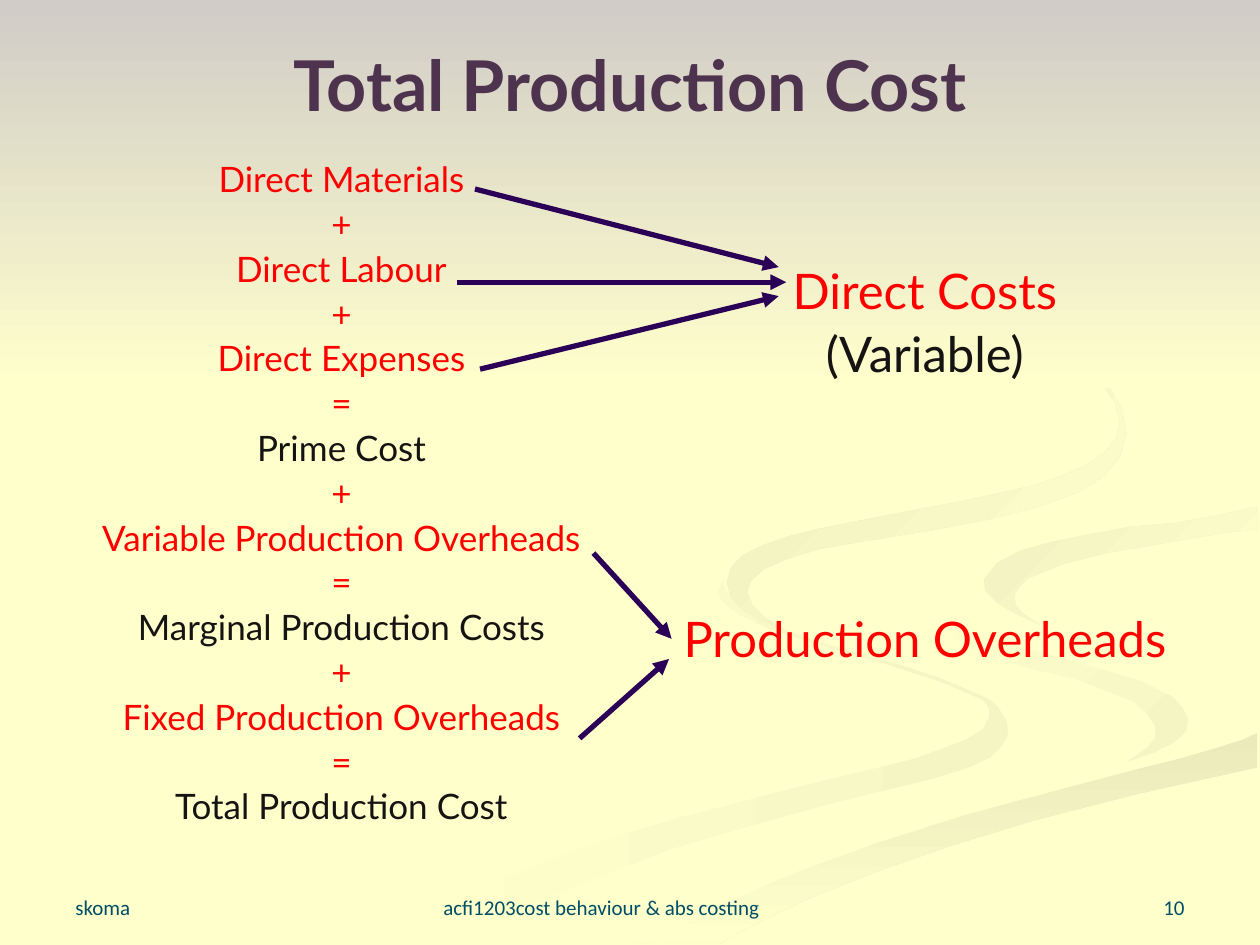
from pptx import Presentation
from pptx.dml.color import RGBColor
from pptx.enum.shapes import MSO_CONNECTOR
from pptx.enum.text import MSO_ANCHOR, PP_ALIGN
from pptx.oxml.ns import qn
from pptx.util import Inches, Pt
from lxml import etree

LEFT, CENTER, RIGHT = PP_ALIGN.LEFT, PP_ALIGN.CENTER, PP_ALIGN.RIGHT
TOP, MIDDLE, BOTTOM = MSO_ANCHOR.TOP, MSO_ANCHOR.MIDDLE, MSO_ANCHOR.BOTTOM
STRAIGHT = MSO_CONNECTOR.STRAIGHT

CREAM, RED, INK = "FFFFCC", "FF0000", "161412"
PLUM, VIOLET, TEAL = "4E334F", "2B0057", "004D66"
HEADING_FONT, FOOTER_FONT = "Lato", "Calibri"

BAND = [(0, 0), (0, 3.08), (10, 3.08), (10, 0)]
LOWER_LEFT_RIBBON = [
    (7.81, 5.53), (7.67, 5.47), (7.45, 5.38), (7.15, 5.28), (6.82, 5.19), (6.42, 5.07),
    (6.14, 4.96), (5.94, 4.85), (5.83, 4.77), (5.76, 4.69), (5.74, 4.64), (5.75, 4.59),
    (5.7, 4.68), (5.72, 4.76), (5.81, 4.84), (5.93, 4.91), (6.11, 4.99), (6.54, 5.13),
    (6.97, 5.25), (7.28, 5.35), (7.52, 5.43), (7.7, 5.51), (7.81, 5.56), (7.85, 5.62),
    (7.85, 5.7), (7.8, 5.79), (7.67, 5.87), (7.49, 5.94), (7.27, 6.02), (6.99, 6.09),
    (6.52, 6.2), (6.16, 6.29), (5.79, 6.39), (5.39, 6.49), (4.99, 6.61), (4.58, 6.74),
    (4.17, 6.9), (3.76, 7.07), (3.38, 7.27), (3, 7.49), (3.61, 7.49), (3.96, 7.31),
    (4.31, 7.14), (4.66, 7), (4.99, 6.87), (5.32, 6.74), (5.94, 6.56), (6.51, 6.4),
    (6.99, 6.28), (7.4, 6.18), (7.69, 6.09), (7.86, 6.01), (7.95, 5.92), (7.99, 5.85),
    (8, 5.81), (7.99, 5.73), (7.92, 5.61), (7.86, 5.56)]
LOWER_RIGHT_RIBBON = [
    (9.43, 5.7), (9.39, 5.62), (9.3, 5.53), (9.05, 5.4), (8.7, 5.3), (8.3, 5.19),
    (7.92, 5.09), (7.58, 4.98), (7.33, 4.83), (7.27, 4.74), (7.24, 4.64), (7.25, 4.74),
    (7.3, 4.84), (7.39, 4.94), (7.55, 5.05), (7.81, 5.18), (8.15, 5.3), (8.54, 5.39),
    (8.8, 5.49), (9, 5.57), (9.11, 5.67), (9.17, 5.76), (9.17, 5.85), (9.11, 5.93),
    (9, 6.01), (8.94, 6.05), (9.16, 5.97), (9.32, 5.89), (9.41, 5.81), (9.43, 5.76)]
SHADED_TAIL = [
    (5.19, 7.47), (5.03, 7.49), (5.71, 7.49), (5.87, 7.4), (6.14, 7.26), (6.49, 7.1),
    (6.95, 6.92), (7.52, 6.72), (8.21, 6.51), (9.03, 6.3), (9.98, 6.09), (9.98, 5.81),
    (9.85, 5.87), (9.63, 5.94), (9.36, 6.02), (9.03, 6.1), (8.31, 6.29), (7.64, 6.47),
    (6.96, 6.69), (6.3, 6.93), (5.69, 7.19), (5.43, 7.33)]
PLAIN_RIBBON = [
    (7.25, 4.64), (7.28, 4.74), (7.34, 4.83), (7.59, 4.98), (7.93, 5.09), (8.31, 5.19),
    (8.71, 5.3), (9.05, 5.4), (9.31, 5.53), (9.39, 5.62), (9.43, 5.7), (9.42, 5.79),
    (9.36, 5.87), (9.26, 5.93), (9.11, 6), (8.92, 6.05), (8.69, 6.11), (8.12, 6.25),
    (7.43, 6.43), (6.63, 6.68), (5.73, 7.03), (5.26, 7.24), (4.77, 7.49), (5.03, 7.49),
    (5.19, 7.47), (5.7, 7.19), (6.3, 6.93), (6.96, 6.69), (7.65, 6.47), (8.32, 6.29),
    (9.04, 6.1), (9.36, 6.02), (9.64, 5.94), (9.86, 5.87), (9.99, 5.81), (9.99, 5.38),
    (9.74, 5.34), (9.41, 5.27), (9.04, 5.19), (8.66, 5.09), (8.32, 4.98), (8.04, 4.85),
    (7.86, 4.73), (7.81, 4.63), (7.86, 4.53), (8, 4.42), (8.22, 4.34), (8.5, 4.27),
    (8.99, 4.18), (9.33, 4.15), (9.68, 4.09), (9.99, 4.02), (9.99, 3.87), (9.62, 3.95),
    (9.2, 4.01), (8.74, 4.08), (8.3, 4.15), (7.88, 4.22), (7.55, 4.32), (7.32, 4.46),
    (7.27, 4.54)]
RIGHT_EDGE_RIBBON = [
    (7.81, 4.6), (7.82, 4.69), (7.91, 4.78), (8.06, 4.87), (8.26, 4.96), (8.12, 4.87),
    (8.06, 4.8), (8.05, 4.72), (8.09, 4.66), (8.16, 4.59), (8.43, 4.48), (8.78, 4.39),
    (9.36, 4.29), (9.71, 4.23), (9.98, 4.2), (9.98, 4.02), (9.67, 4.09), (9.33, 4.15),
    (8.98, 4.18), (8.65, 4.24), (8.35, 4.3), (8.1, 4.37), (7.91, 4.47)]
UPPER_RIBBON = [
    (6.83, 4.3), (7.39, 4.21), (7.86, 4.12), (8.25, 4.02), (8.55, 3.91), (8.76, 3.78),
    (8.89, 3.62), (8.94, 3.44), (8.9, 3.24), (8.8, 3.07), (8.64, 2.91), (8.43, 2.75),
    (8.1, 2.56), (7.8, 2.41), (7.62, 2.33), (8.05, 2.54), (8.46, 2.79), (8.62, 2.92),
    (8.76, 3.06), (8.85, 3.2), (8.89, 3.35), (8.86, 3.48), (8.76, 3.6), (8.61, 3.7),
    (8.42, 3.78), (8.18, 3.86), (7.63, 3.98), (7.04, 4.09), (6.49, 4.2), (6.25, 4.26),
    (6.05, 4.33), (5.89, 4.41), (5.8, 4.51), (5.77, 4.62), (5.8, 4.74), (5.9, 4.84),
    (6.04, 4.92), (6.22, 5), (6.07, 4.9), (5.97, 4.8), (5.93, 4.7), (5.96, 4.61),
    (6.06, 4.52), (6.24, 4.44), (6.49, 4.36)]
BACKDROP = [
    (LOWER_LEFT_RIBBON, CREAM, "F5F5C4", 0),
    (LOWER_RIGHT_RIBBON, CREAM, "F5F5C4", 45),
    (SHADED_TAIL, "EAEABB", CREAM, 90),
    (PLAIN_RIBBON, CREAM, CREAM, 0),
    (RIGHT_EDGE_RIBBON, "F1F1C1", CREAM, 45),
    (UPPER_RIBBON, "EDEDBE", CREAM, 45),
    (BAND, "D1CCC7", CREAM, 90),
]
COST_BUILD_UP = [
    "Direct Materials", "+", "Direct Labour", "+", "Direct Expenses", "=", "Prime Cost", "+",
    "Variable Production Overheads", "=", "Marginal Production Costs", "+",
    "Fixed Production Overheads", "=", "Total Production Cost",
]
TOTALS = {"Prime Cost", "Marginal Production Costs", "Total Production Cost", "(Variable)"}
COST_GROUPS = [
    (["Direct Costs", "(Variable)"], 2.07, 1.02),
    (["Production Overheads"], 4.83, 0.52),
]
ARROWS = [
    ((4.71, 4.39), (5.33, 5.07)),
    ((4.6, 5.86), (5.31, 5.23)),
    ((3.77, 1.5), (6.18, 2.12)),
    ((3.81, 2.93), (6.18, 2.35)),
    ((3.63, 2.24), (6.24, 2.24)),
]
FOOTERS = [
    ("skoma", 0.5, 2.33, LEFT),
    ("acfi1203cost behaviour & abs costing", 3.42, 3.17, LEFT),
    ("10", 7.17, 2.33, RIGHT),
]


def rgb(value):
    return RGBColor.from_string(value)


class CostSlide:
    """Hold the slide and draw each kind of element in its style."""

    def __init__(self, deck):
        self.slide = deck.slides.add_slide(deck.slide_layouts[5])
        self.shapes = self.slide.shapes
        background = self.slide.background.fill
        background.solid()
        background.fore_color.rgb = rgb(CREAM)

    def ribbon(self, points, start, end, angle):
        corners = [(Inches(x), Inches(y)) for x, y in points]
        builder = self.shapes.build_freeform(*corners[0])
        builder.add_line_segments(corners[1:], close=True)
        ribbon = builder.convert_to_shape()
        ribbon.shadow.inherit = False
        ribbon.line.fill.background()
        if start == end:
            ribbon.fill.solid()
            ribbon.fill.fore_color.rgb = rgb(start)
            return
        ribbon.fill.gradient()
        ribbon.fill.gradient_angle = -angle % 360
        for stop, color in zip(ribbon.fill.gradient_stops, (start, end)):
            stop.color.rgb = rgb(color)

    def set_text(self, frame, lines, size, font, color, align, anchor):
        frame.word_wrap = True
        frame.vertical_anchor = anchor
        frame.text = "\n".join(lines)
        for paragraph in frame.paragraphs:
            paragraph.alignment = align
            paragraph.font.size = Pt(size)
            paragraph.font.name = font
            paragraph.font.color.rgb = rgb(color)

    def title(self, text):
        title = self.shapes.title
        title.left, title.top = Inches(0.5), Inches(0.3)
        title.width, title.height = Inches(9), Inches(0.73)
        self.set_text(title.text_frame, [text], 40, HEADING_FONT, PLUM, CENTER, MIDDLE)
        title.text_frame.paragraphs[0].font.bold = True
        title.element.getparent().append(title.element)

    def box(self, left, top, width, height):
        return self.shapes.add_textbox(
            Inches(left), Inches(top), Inches(width), Inches(height)).text_frame

    def costs(self, lines, left, top, width, height, size):
        frame = self.box(left, top, width, height)
        self.set_text(frame, lines, size, HEADING_FONT, RED, CENTER, TOP)
        for index, paragraph in enumerate(frame.paragraphs):
            paragraph.line_spacing = 0.9
            paragraph.space_before = Pt(size * 0.2 if index else 0)
            if paragraph.text in TOTALS:
                paragraph.font.color.rgb = rgb(INK)

    def footer(self, text, left, width, align):
        frame = self.box(left, 6.83, width, 0.52)
        self.set_text(frame, [text], 12, FOOTER_FONT, TEAL, align, BOTTOM)

    def arrow(self, start, end):
        arrow = self.shapes.add_connector(STRAIGHT, *map(Inches, start + end))
        arrow.line.color.rgb = rgb(VIOLET)
        arrow.line.width = Pt(3)
        properties = arrow.element.spPr
        etree.SubElement(properties.find(qn("a:ln")), qn("a:tailEnd"), type="triangle")
        etree.SubElement(properties, qn("a:effectLst"))


def main():
    deck = Presentation()
    deck.slide_width, deck.slide_height = Inches(10), Inches(7.5)
    page = CostSlide(deck)
    for ribbon in BACKDROP:
        page.ribbon(*ribbon)
    page.title("Total Production Cost")
    page.costs(COST_BUILD_UP, 0.5, 1.24, 4.42, 5.65, 20)
    for lines, top, height in COST_GROUPS:
        page.costs(lines, 5.08, top, 4.52, height, 28)
    for footer in FOOTERS:
        page.footer(*footer)
    for arrow in ARROWS:
        page.arrow(*arrow)
    deck.save("out.pptx")


if __name__ == "__main__":
    main()
